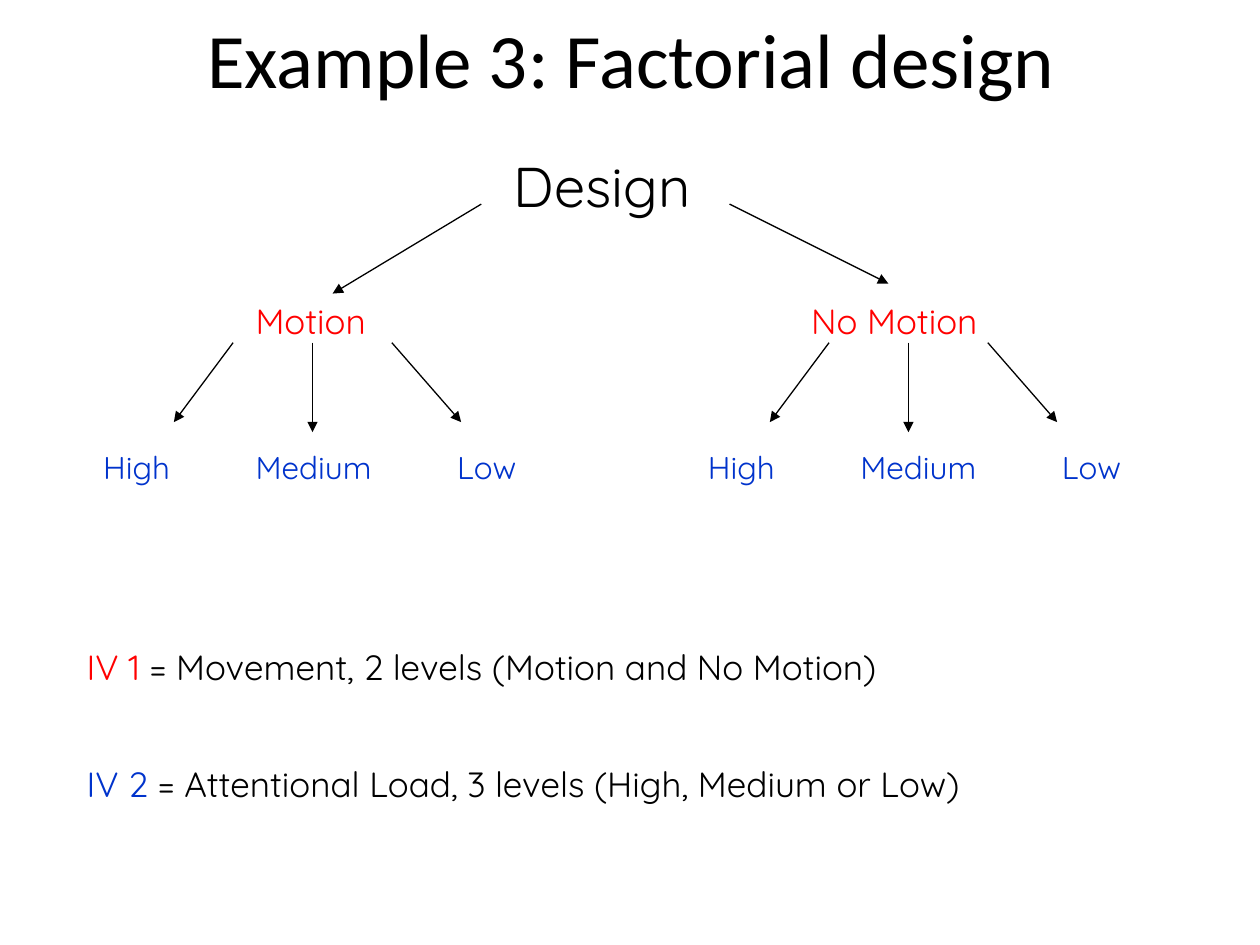
from typing import NamedTuple

from lxml import etree
from pptx import Presentation
from pptx.dml.color import RGBColor
from pptx.enum.shapes import MSO_CONNECTOR
from pptx.enum.text import MSO_ANCHOR, PP_ALIGN
from pptx.oxml.ns import qn
from pptx.util import Inches, Pt

STRAIGHT = MSO_CONNECTOR.STRAIGHT
LEFT, CENTER = PP_ALIGN.LEFT, PP_ALIGN.CENTER
TOP, MIDDLE = MSO_ANCHOR.TOP, MSO_ANCHOR.MIDDLE
BLANK_LAYOUT = 6
BLACK, RED, BLUE = "000000", "FF0000", "0033CC"
BODY_FONT = "Quicksand"


class Box(NamedTuple):
    left: float
    top: float
    width: float
    height: float


class Piece(NamedTuple):
    text: str
    color: str


class Branch(NamedTuple):
    name: str
    name_box: Box
    center: float
    levels_left: float


class Arrow(NamedTuple):
    start_offset: float
    end_offset: float
    end_y: float


BRANCHES = [
    Branch("Motion", Box(1.93, 2.33, 1.26, 0.43), 2.48, 0.04),
    Branch("No Motion", Box(6.34, 2.33, 1.57, 0.43), 7.21, 4.84),
]
LEVEL_ARROWS = [
    Arrow(-0.63, -1.1, 3.35),
    Arrow(0, 0, 3.43),
    Arrow(0.63, 1.18, 3.35),
]
LEVEL_ARROW_TOP = 2.72
LEVELS = ["High", "Medium", "Low"]
LEVEL_TABS = [0.68, 1.89, 3.49]
VARIABLES = [
    [Piece("IV 1", RED), Piece(" = Movement, 2 levels (Motion and No Motion)", BLACK)],
    [Piece("IV 2", BLUE),
     Piece(" = Attentional Load, 3 levels (High, Medium or Low)", BLACK)],
]


def rgb(color: str) -> RGBColor:
    return RGBColor.from_string(color)


def add_text(slide, box: Box, lines: list[list[Piece]], size: float,
             font_name: str = BODY_FONT, align=LEFT, anchor=TOP, gap: float = 0):
    """Add a text box with one paragraph per line, gap points apart."""
    shape = slide.shapes.add_textbox(*map(Inches, box))
    frame = shape.text_frame
    frame.word_wrap = True
    frame.vertical_anchor = anchor
    for index, line in enumerate(lines):
        paragraph = frame.add_paragraph() if index else frame.paragraphs[0]
        paragraph.alignment = align
        if index:
            paragraph.space_before = Pt(gap)
        for piece in line:
            run = paragraph.add_run()
            run.text = piece.text
            for name, value in {"name": font_name, "size": Pt(size)}.items():
                setattr(run.font, name, value)
            run.font.color.rgb = rgb(piece.color)
    return shape


def set_tabs(paragraph, positions: list[float]) -> None:
    properties = paragraph._p.get_or_add_pPr()
    tabs = etree.SubElement(properties, qn("a:tabLst"))
    for position in positions:
        etree.SubElement(tabs, qn("a:tab"), pos=str(Inches(position)), algn="l")


def add_arrow(slide, start_x: float, start_y: float, end_x: float, end_y: float) -> None:
    points = map(Inches, (start_x, start_y, end_x, end_y))
    connector = slide.shapes.add_connector(STRAIGHT, *points)
    connector.line.width = Pt(0.75)
    connector.line.color.rgb = rgb(BLACK)
    etree.SubElement(connector.line._get_or_add_ln(), qn("a:tailEnd"), type="triangle")
    etree.SubElement(connector._element.spPr, qn("a:effectLst"))


def add_branch(slide, branch: Branch) -> None:
    """Add a level of the first variable with its three sub-levels."""
    add_text(slide, branch.name_box, [[Piece(branch.name, RED)]], 20)
    for arrow in LEVEL_ARROWS:
        add_arrow(slide, branch.center + arrow.start_offset, LEVEL_ARROW_TOP,
                  branch.center + arrow.end_offset, arrow.end_y)
    labels = "".join(f"\t{level}" for level in LEVELS)
    shape = add_text(slide, Box(branch.levels_left, 3.51, 4.8, 0.4),
                     [[Piece(labels, BLUE)]], 18)
    set_tabs(shape.text_frame.paragraphs[0], LEVEL_TABS)


def main() -> None:
    presentation = Presentation()
    presentation.slide_width = Inches(10)
    presentation.slide_height = Inches(7.5)
    slide = presentation.slides.add_slide(presentation.slide_layouts[BLANK_LAYOUT])

    add_text(slide, Box(0.51, 0, 9, 0.92), [[Piece("Example 3: Factorial design", BLACK)]],
             44, "Calibri", CENTER, MIDDLE)
    add_text(slide, Box(3.98, 1.15, 1.89, 0.63), [[Piece("Design", BLACK)]], 32)
    add_arrow(slide, 3.82, 1.62, 2.64, 2.33)
    add_arrow(slide, 5.79, 1.62, 7.05, 2.25)
    for branch in BRANCHES:
        add_branch(slide, branch)
    add_text(slide, Box(0.59, 5.07, 9.06, 1.43), VARIABLES, 20, gap=43)

    presentation.save("out.pptx")


if __name__ == "__main__":
    main()
